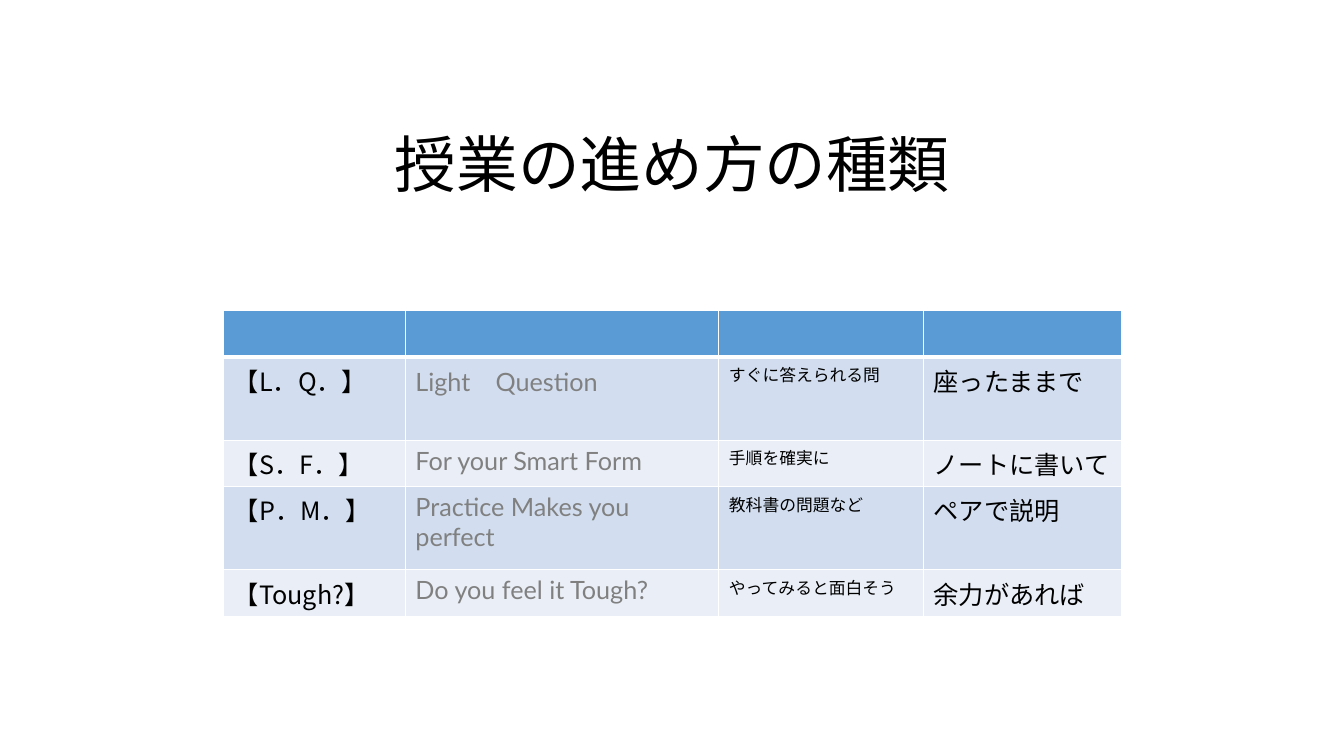
from lxml.etree import SubElement
from pptx import Presentation
from pptx.dml.color import RGBColor
from pptx.enum.text import MSO_ANCHOR, MSO_AUTO_SIZE, PP_ALIGN
from pptx.oxml.ns import qn
from pptx.util import Inches, Pt

COLORS = {
    "text": "000000",
    "english": "808080",
    "header": "5B9BD5",
    "odd": "D2DEEF",
    "even": "EAEFF7",
    "border": "FFFFFF",
}
JAPANESE = "Noto Sans CJK JP"
COLUMNS = [
    (1.8, 18, JAPANESE, "text"),
    (3.11, 18, "Lato", "english"),
    (2.03, 12, JAPANESE, "text"),
    (1.96, 18, JAPANESE, "text"),
]
ROW_HEIGHTS = [0.45, 0.41, 0.41, 0.48, 0.41]
LESSONS = [
    ("【L．Q．】", "Light　Question", "すぐに答えられる問", "座ったままで"),
    ("【S．F．】", "For your Smart Form", "手順を確実に", "ノートに書いて"),
    ("【P．M．】", "Practice Makes you perfect", "教科書の問題など", "ペアで説明"),
    ("【Tough?】", "Do you feel it Tough?", "やってみると面白そう", "余力があれば"),
]


def style_paragraph(paragraph, size, typeface, color):
    """Set size, colour and both Latin and East Asian typefaces."""
    font = paragraph.font
    font.size = Pt(size)
    font.name = typeface
    font.color.rgb = RGBColor.from_string(COLORS[color])
    properties = paragraph._p.pPr.find(qn("a:defRPr"))
    SubElement(properties, qn("a:ea"), typeface=JAPANESE)


def set_borders(cell, top, bottom):
    """Draw white borders with the given top and bottom widths in points."""
    properties = cell._tc.get_or_add_tcPr()
    for side, width in (("L", 1), ("R", 1), ("T", top), ("B", bottom)):
        line = SubElement(properties, qn(f"a:ln{side}"), w=str(Pt(width)))
        fill = SubElement(line, qn("a:solidFill"))
        SubElement(fill, qn("a:srgbClr"), val=COLORS["border"])


def fill_cell(cell, color):
    """Give a cell a solid fill."""
    cell.fill.solid()
    cell.fill.fore_color.rgb = RGBColor.from_string(COLORS[color])


def add_title(slide, text):
    """Place and format the slide title."""
    title = slide.shapes.title
    title.left, title.top = Inches(1.67), Inches(1.23)
    title.width, title.height = Inches(10), Inches(0.81)
    frame = title.text_frame
    frame.text = text
    frame.word_wrap = True
    frame.auto_size = MSO_AUTO_SIZE.NONE
    frame.vertical_anchor = MSO_ANCHOR.BOTTOM
    paragraph = frame.paragraphs[0]
    paragraph.alignment = PP_ALIGN.CENTER
    paragraph.line_spacing = 0.9
    style_paragraph(paragraph, 44, JAPANESE, "text")


def add_lesson_table(slide):
    """Add the table of lesson styles below an empty header row."""
    rows = [("",) * len(COLUMNS), *LESSONS]
    frame = slide.shapes.add_table(
        len(rows), len(COLUMNS), Inches(2.22), Inches(3.08),
        Inches(8.9), Inches(sum(ROW_HEIGHTS)))
    table = frame.table
    for column, (width, *_) in zip(table.columns, COLUMNS):
        column.width = Inches(width)
    for index, (row, height, texts) in enumerate(zip(table.rows, ROW_HEIGHTS, rows)):
        row.height = Inches(height)
        color = "header" if index == 0 else "odd" if index % 2 else "even"
        for cell, text, (_, size, typeface, text_color) in zip(row.cells, texts, COLUMNS):
            set_borders(cell, 3 if index == 1 else 1, 3 if index == 0 else 1)
            fill_cell(cell, color)
            cell.text = text
            style_paragraph(cell.text_frame.paragraphs[0], size, typeface, text_color)


def main():
    """Build and save the slide."""
    presentation = Presentation()
    presentation.slide_width = Inches(13.33)
    presentation.slide_height = Inches(7.5)
    slide = presentation.slides.add_slide(presentation.slide_layouts[5])
    add_title(slide, "授業の進め方の種類")
    add_lesson_table(slide)
    presentation.save("out.pptx")


if __name__ == "__main__":
    main()
